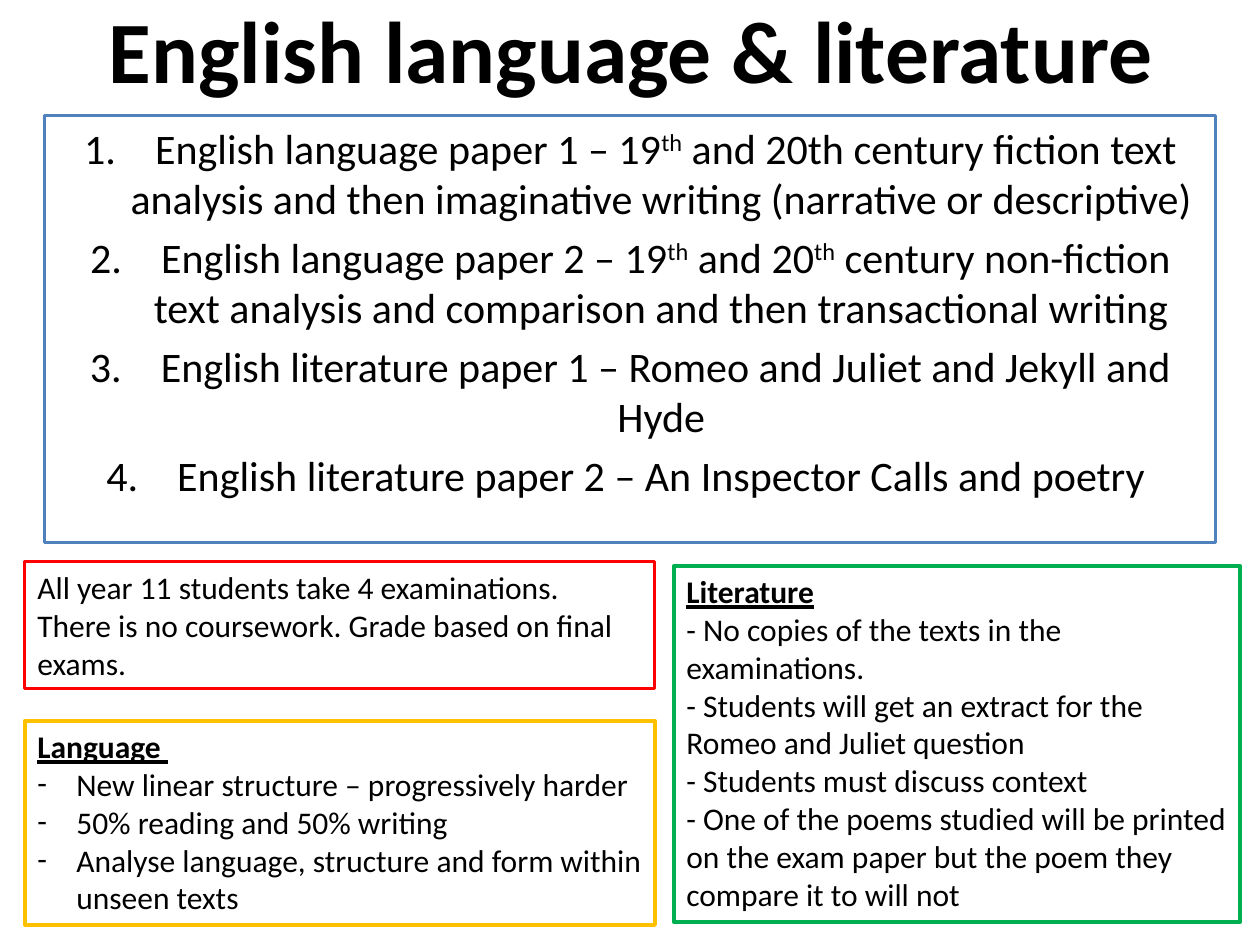
from lxml.etree import SubElement
from pptx import Presentation
from pptx.dml.color import RGBColor
from pptx.enum.shapes import MSO_SHAPE
from pptx.enum.text import MSO_ANCHOR, PP_ALIGN
from pptx.oxml.ns import qn
from pptx.util import Pt

EMU_PER_PX = 914400 / 126
FONT = "Calibri"
BLACK = RGBColor(0x00, 0x00, 0x00)
BLUE = RGBColor(0x4F, 0x81, 0xBD)
RED = RGBColor(0xFF, 0x00, 0x00)
AMBER = RGBColor(0xFF, 0xC0, 0x00)
GREEN = RGBColor(0x00, 0xB0, 0x50)

# A paragraph is a list of spans; "^" marks superscript and "_" a heading.
TITLE = [["English language & literature"]]
PAPERS = [
    ["English language paper 1 – 19", "^th",
     " and 20th century fiction text analysis and then imaginative writing (narrative or descriptive) "],
    ["English language paper 2 – 19", "^th", " and 20", "^th",
     " century non-fiction text analysis and comparison and then transactional writing "],
    ["English literature paper 1 – Romeo and Juliet and Jekyll and Hyde "],
    ["English literature paper 2 – An Inspector Calls and poetry "],
]
EXAMS = [["All year 11 students take 4 examinations.\n"
          "There is no coursework. Grade based on final exams."]]
LANGUAGE_HEADING = [["_Language "]]
LANGUAGE_POINTS = [
    ["New linear structure – progressively harder"],
    ["50% reading and 50% writing"],
    ["Analyse language, structure and form within unseen texts"],
]
LITERATURE = [
    ["_Literature\n",
     "- No copies of the texts in the examinations. \n"
     "- Students will get an extract for the Romeo and Juliet question"],
    ["- Students must discuss context"],
    ["- One of the poems studied will be printed on the exam paper but the poem they compare it to will not"],
]


def px(length):
    return round(length * EMU_PER_PX)


def add_span(para, text, size, bold):
    mark = text[0] if text[0] in "^_" else ""
    for index, line in enumerate(text.removeprefix(mark).split("\n")):
        if index:
            para.add_line_break()
        if not line:
            continue
        span = para.add_run()
        span.text = line
        span.font.name = FONT
        span.font.size = Pt(size)
        span.font.color.rgb = BLACK
        span.font.bold = bold or mark == "_"
        span.font.underline = mark == "_"
        if mark == "^":
            span.font._element.set("baseline", "30000")


def set_bullet(para, indent, tag, **attributes):
    """Hang the paragraph by indent px behind a bullet element such as a:buChar."""
    properties = para._p.get_or_add_pPr()
    properties.set("marL", str(px(indent)))
    properties.set("indent", str(-px(indent)))
    SubElement(properties, qn("a:buFont"), typeface=FONT)
    SubElement(properties, qn(tag), **attributes)


def write(box, paragraphs, size=18, bold=False, align=PP_ALIGN.LEFT, before=0, bullet=None):
    """Append paragraphs to the box; bullet holds the arguments of set_bullet."""
    frame = box.text_frame
    frame.word_wrap = True
    for spans in paragraphs:
        para = frame.add_paragraph() if frame.paragraphs[-1].runs else frame.paragraphs[0]
        para.alignment = align
        para.space_before = Pt(before)
        if bullet:
            set_bullet(para, **bullet)
        for text in spans:
            add_span(para, text, size, bold)


def add_panel(page, left, top, width, height, color, weight):
    panel = page.shapes.add_shape(MSO_SHAPE.RECTANGLE, px(left), px(top), px(width), px(height))
    panel.shadow.inherit = False
    panel.fill.background()
    panel.line.color.rgb = color
    panel.line.width = Pt(weight)
    panel.text_frame.vertical_anchor = MSO_ANCHOR.TOP
    return panel


def main():
    deck = Presentation()
    deck.slide_width, deck.slide_height = px(1260), px(945)
    page = deck.slides.add_slide(deck.slide_layouts[6])

    papers = add_panel(page, 45, 116, 1171, 427, BLUE, 1.75)
    write(papers, PAPERS, size=24, align=PP_ALIGN.CENTER, before=4.8,
          bullet=dict(indent=71, tag="a:buAutoNum", type="arabicPeriod"))

    title = page.shapes.add_textbox(px(96), px(-53), px(1071), px(203))
    title.text_frame.vertical_anchor = MSO_ANCHOR.MIDDLE
    write(title, TITLE, size=50, bold=True, align=PP_ALIGN.CENTER)

    literature = add_panel(page, 674, 566, 566, 356, GREEN, 2.5)
    write(literature, LITERATURE)

    exams = add_panel(page, 25, 562, 630, 127, RED, 1.75)
    write(exams, EXAMS)

    language = add_panel(page, 25, 721, 630, 204, AMBER, 2.25)
    write(language, LANGUAGE_HEADING)
    write(language, LANGUAGE_POINTS, bullet=dict(indent=39, tag="a:buChar", char="-"))

    deck.save("out.pptx")


if __name__ == "__main__":
    main()
